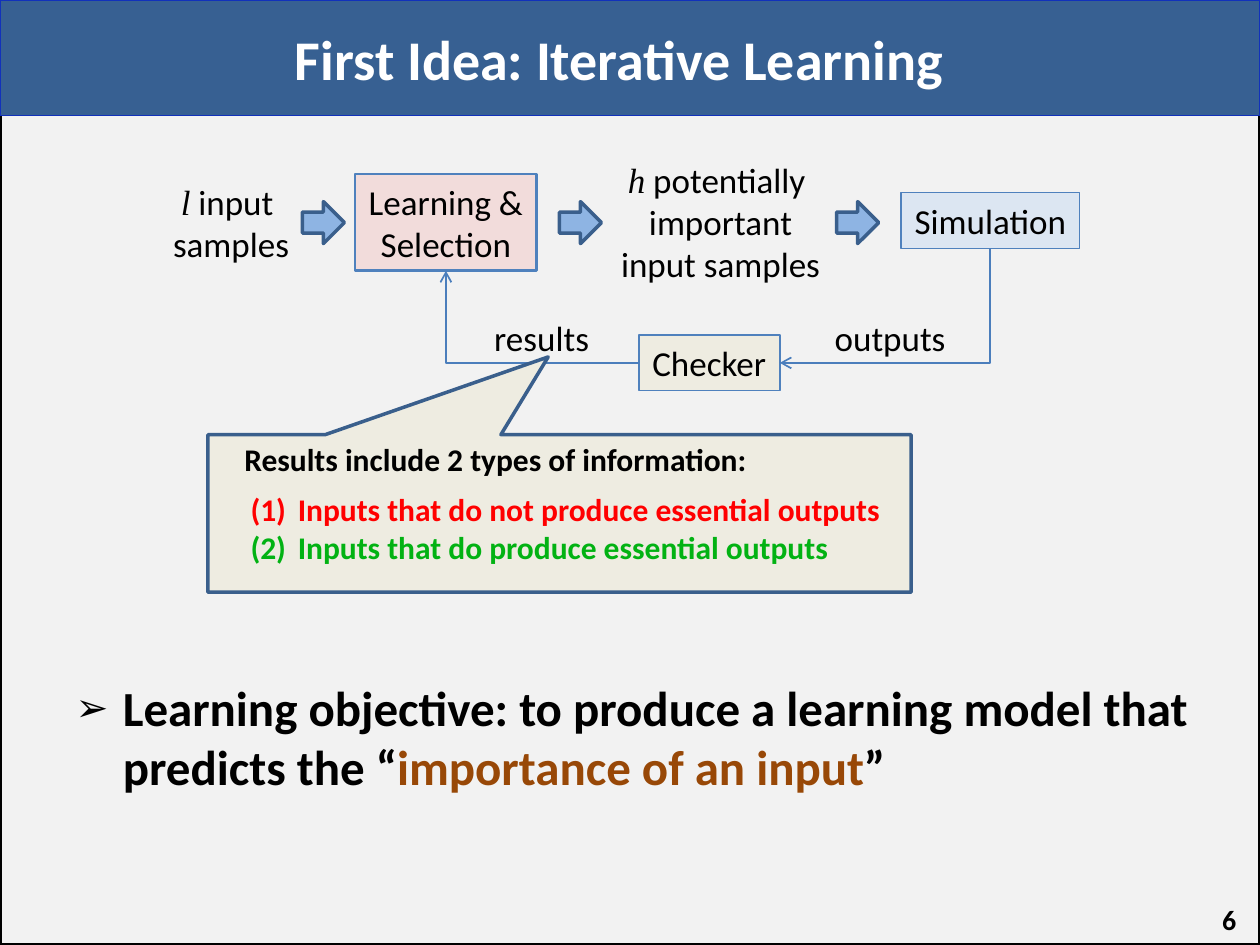
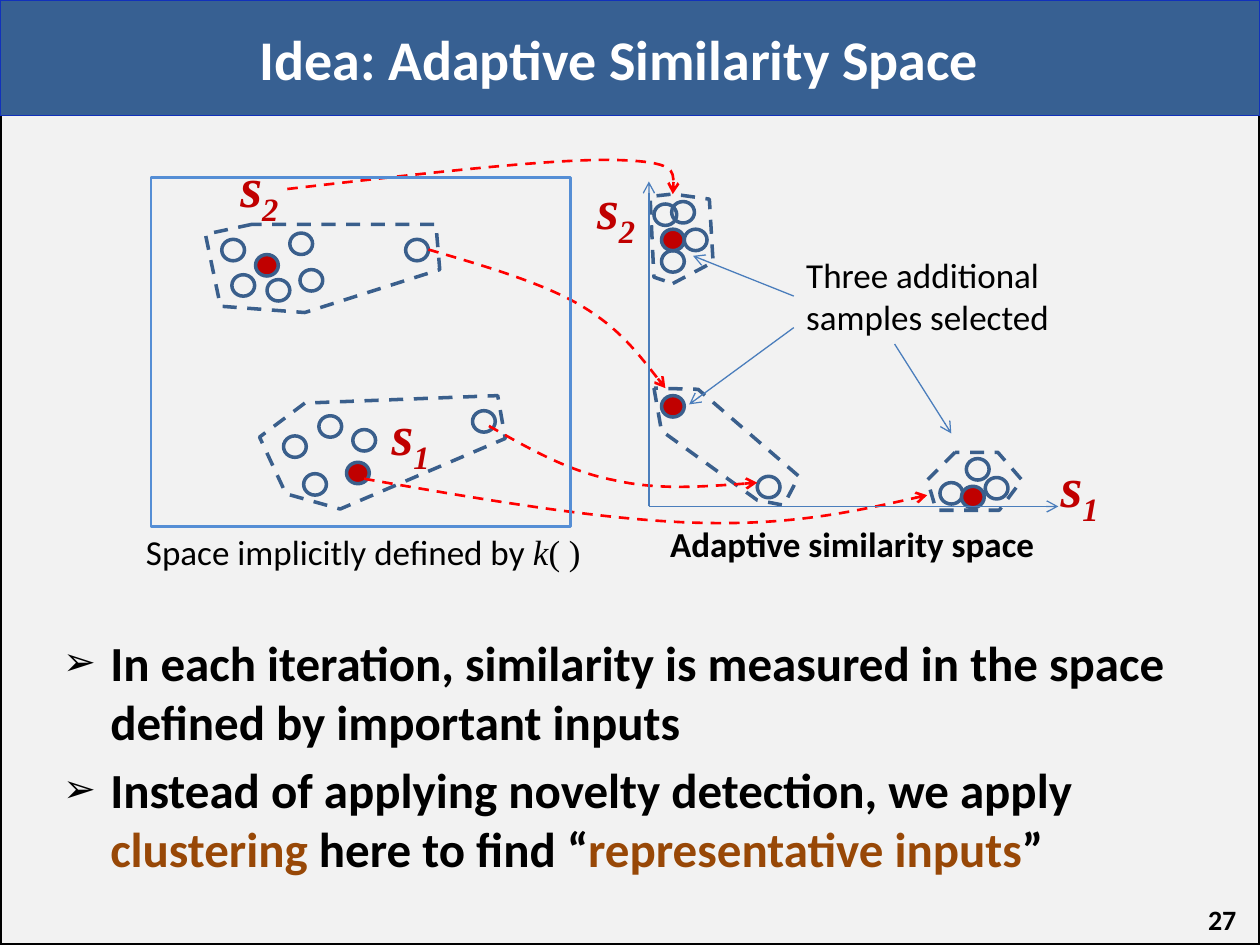
import pptx
import pptx.util
import pptx.dml.color
import pptx.enum.dml
import pptx.enum.shapes
import pptx.enum.text
import pptx.oxml.ns
from lxml import etree

Pt = pptx.util.Pt
qn = pptx.oxml.ns.qn
RGB = pptx.dml.color.RGBColor.from_string
SHAPE = pptx.enum.shapes.MSO_SHAPE
CONNECTOR = pptx.enum.shapes.MSO_CONNECTOR
ALIGN = pptx.enum.text.PP_ALIGN
AUTO_SIZE = pptx.enum.text.MSO_AUTO_SIZE

COLOURS = {
    "black": "000000", "white": "FFFFFF", "page": "F2F2F2",
    "band": "376092", "band edge": "1131BB",
    "emphasis": "984807", "negative": "FF0000", "positive": "02B213",
    "arrow": "8EB4E3", "dark edge": "3A5F8C", "box edge": "4F81BD",
    "flow": "4B7EBC", "learning": "F2DCDB", "simulation": "DCE6F2",
    "checker": "EEECE1", "selected": "C00000", "mapping": "FF0000",
    "space edge": "558ED5",
}
ARROW_BULLET = [("a:buSzPct", {"val": "80000"}), ("a:buChar", {"char": "➢"})]
NUMBER_BULLET = [("a:buAutoNum", {"type": "arabicParenBoth"})]
SERIF = "Times New Roman"


def write(frame, lines, size=20, bold=False, colour="black",
          align=ALIGN.LEFT, bullet=(), wrap=False):
    """Fill a text frame; each line is a list of (text, run settings)."""
    frame.word_wrap = wrap
    frame.auto_size = AUTO_SIZE.NONE if wrap else AUTO_SIZE.SHAPE_TO_FIT_TEXT
    for number, line in enumerate(lines):
        paragraph = frame.add_paragraph() if number else frame.paragraphs[0]
        paragraph.alignment = align
        if bullet:
            properties = paragraph._p.get_or_add_pPr()
            properties.set("marL", str(Pt(27)))
            properties.set("indent", str(-Pt(27)))
            for tag, settings in bullet:
                etree.SubElement(properties, qn(tag), settings)
        for text, settings in line:
            run = paragraph.add_run()
            run.text = text
            run.font.size = Pt(size)
            run.font.bold = bold
            run.font.name = settings.get("font", "Calibri")
            run.font.italic = settings.get("italic", False)
            run.font.color.rgb = RGB(COLOURS[settings.get("colour", colour)])
            if "baseline" in settings:
                run._r.get_or_add_rPr().set("baseline", settings["baseline"])


def paint(shape, edge, width, fill=None, dashed=False, arrow=False):
    """Set fill, line and arrowhead of a shape or connector, without shadow."""
    if fill:
        shape.fill.solid()
        shape.fill.fore_color.rgb = RGB(COLOURS[fill])
    elif hasattr(shape, "fill"):
        shape.fill.background()
    shape.line.color.rgb = RGB(COLOURS[edge])
    shape.line.width = Pt(width)
    if dashed:
        shape.line.dash_style = pptx.enum.dml.MSO_LINE.DASH
    if arrow:
        etree.SubElement(shape.line._get_or_add_ln(), qn("a:tailEnd"), {"type": "arrow"})
    etree.SubElement(shape._element.spPr, qn("a:effectLst"))


deck = pptx.Presentation()
deck.slide_width, deck.slide_height = Pt(720), Pt(540)

# Shared layout
layout = deck.slide_layouts[1]
for placeholder in list(layout.placeholders)[2:]:
    placeholder._element.getparent().remove(placeholder._element)
layout_title = layout.placeholders[0]
layout_title.left, layout_title.top = Pt(12), Pt(0)
layout_title.width, layout_title.height = Pt(684), Pt(66)

PAGES = [
    {"title": "First Idea: Iterative Learning", "number": "6",
     "place": (36, 383.8, 658.8, 84.2),
     "points": [[("Learning objective: to produce a learning model that predicts the “", {}),
                 ("importance of an input", {"colour": "emphasis"}), ("”", {})]]},
    {"title": "Idea: Adaptive Similarity Space", "number": "27",
     "place": (28.8, 357.8, 653, 157.7),
     "points": [[("In each iteration, similarity is measured in the space "
                  "defined by important inputs", {})],
                [("Instead of applying novelty detection, we apply ", {}),
                 ("clustering ", {"colour": "emphasis"}), ("here to find “", {}),
                 ("representative inputs", {"colour": "emphasis"}), ("”", {})]]},
]
slides = []
for page in PAGES:
    slide = deck.slides.add_slide(layout)
    slides.append(slide)
    write(slide.shapes.title.text_frame, [[(page["title"], {})]], 32, True, "white",
          ALIGN.CENTER, wrap=True)
    body = slide.placeholders[1]
    body.left, body.top, body.width, body.height = map(Pt, page["place"])
    write(body.text_frame, page["points"], 28, True, bullet=ARROW_BULLET, wrap=True)
    page_number = slide.shapes.add_textbox(Pt(545.8), Pt(511.2), Pt(167.8), Pt(28.8))
    page_number.text_frame.vertical_anchor = pptx.enum.text.MSO_ANCHOR.MIDDLE
    write(page_number.text_frame, [[(page["number"], {})]], 16, True,
          align=ALIGN.RIGHT, wrap=True)

learning_slide, space_slide = slides

# The page frame and title band are drawn once and moved to the layout
page_frame = learning_slide.shapes.add_shape(SHAPE.RECTANGLE, 0, 0, Pt(720), Pt(540))
title_band = learning_slide.shapes.add_shape(SHAPE.RECTANGLE, 0, 0, Pt(720), Pt(66))
paint(page_frame, "black", 2, "page")
paint(title_band, "band edge", 0.75, "band")
for depth, backdrop in enumerate((page_frame, title_band), start=2):
    layout.shapes._spTree.insert(depth, backdrop._element)

# Iterative learning loop
shapes = learning_slide.shapes
ITALIC = {"font": SERIF, "italic": True}
LOOP_LABELS = [
    (91.4, 99.4, 81.4, 55.4, [[("l", ITALIC), (" input ", {})], [("samples", {})]]),
    (347, 87.1, 129.6, 80, [[("h", ITALIC), (" potentially ", {})],
                            [("important", {})], [("input samples", {})]]),
    (469.4, 177.1, 78.5, 31.7, [[("outputs", {})]]),
    (275, 177.1, 69.1, 31.7, [[("results", {})]]),
]
for left, top, width, height, lines in LOOP_LABELS:
    label = shapes.add_textbox(Pt(left), Pt(top), Pt(width), Pt(height))
    write(label.text_frame, lines, align=ALIGN.CENTER)

for left in (172.8, 319.7, 478.1):
    step_arrow = shapes.add_shape(SHAPE.RIGHT_ARROW, Pt(left), Pt(115.2), Pt(24), Pt(24))
    paint(step_arrow, "dark edge", 2, "arrow")

steps = {}
for step, left, top, width, height, edge_width, lines in [
    ("learning", 203, 99.4, 103.7, 55.4, 1.5, ["Learning &", "Selection"]),
    ("simulation", 514.8, 110.2, 102.2, 31.7, 0.75, ["Simulation"]),
    ("checker", 365, 191.5, 80.6, 31.7, 1, ["Checker"]),
]:
    box = shapes.add_shape(SHAPE.RECTANGLE, Pt(left), Pt(top), Pt(width), Pt(height))
    paint(box, "box edge", edge_width, step)
    write(box.text_frame, [[(line, {})] for line in lines], align=ALIGN.CENTER)
    steps[step] = box

for source, source_side, target, target_side in [
    ("simulation", 2, "checker", 3), ("checker", 1, "learning", 2),
]:
    flow = shapes.add_connector(CONNECTOR.ELBOW, 0, 0, 0, 0)
    flow.begin_connect(steps[source], source_side)
    flow.end_connect(steps[target], target_side)
    flow._element.spPr.find(qn("a:prstGeom")).set("prst", "bentConnector2")
    paint(flow, "flow", 1, arrow=True)
    if source_side == 2:  # leaves downwards, so the elbow is turned a quarter
        across, down = flow.width, flow.height
        flow.left += (across - down) // 2
        flow.top += (down - across) // 2
        flow.width, flow.height = down, across
        flow._element.spPr.xfrm.flipH = False
        flow._element.spPr.xfrm.rot = 90

callout = shapes.add_shape(SHAPE.RECTANGULAR_CALLOUT, Pt(118.8), Pt(248.4), Pt(401.8), Pt(90))
callout.adjustments[0], callout.adjustments[1] = -0.016, -0.994
paint(callout, "dark edge", 2, "checker")
heading = shapes.add_textbox(Pt(132.5), Pt(247.7), Pt(303.8), Pt(28.8))
write(heading.text_frame, [[("Results include 2 types of information:", {})]], 18, True)
result_types = shapes.add_textbox(Pt(136.1), Pt(276.5), Pt(377.3), Pt(51.1))
write(result_types.text_frame, [
    [("Inputs that do not produce essential outputs", {"colour": "negative"})],
    [("Inputs that do produce essential outputs", {"colour": "positive"})],
], 18, True, bullet=NUMBER_BULLET)

# Adaptive similarity space
shapes = space_slide.shapes
CLUSTERS = [
    {"selected": (146, 145.5),
     "samples": [(146, 145.5), (132.5, 157), (126.7, 136.8), (152.6, 159.8),
                 (165.6, 133.2), (171.4, 154.1), (231.8, 136.8)],
     "outline": [(144, 128.2), (117.4, 133.9), (126, 175), (174.2, 178.6),
                 (251.3, 154.1), (249.1, 128.2)]},
    {"selected": (198, 264.2),
     "samples": [(198, 264.2), (162, 249.1), (182.2, 237.6), (173.5, 270.7),
                 (201.6, 245.5), (270, 234.7)],
     "outline": [(174.2, 230.4), (148.3, 249.8), (163.4, 282.2), (194.4, 290.9),
                 (288.7, 250.6), (284.4, 226.1)]},
    {"selected": (549.4, 277.9),
     "samples": [(537.1, 275.8), (563, 272.9), (549.4, 277.9), (552.2, 262.1)],
     "outline": [(545.8, 258.5), (529.9, 274.3), (535, 291.6), (571, 291.6),
                 (583.9, 274.3), (570.2, 258.5)]},
    {"selected": (378, 226.1),
     "samples": [(432.7, 272.2), (378, 226.1)],
     "outline": [(373.7, 221.8), (378, 246.2), (432.7, 285.8), (447.8, 288.7),
                 (456.5, 272.2), (398.9, 222.5)]},
    {"selected": (378, 131),
     "samples": [(378, 131), (383.8, 115.2), (378, 143.3), (391, 131), (373.7, 116.6)],
     "outline": [(384.5, 162), (407.5, 149.8), (405.4, 113.8), (384.5, 110.9),
                 (371.5, 112.3), (373.7, 158.4)]},
]
for cluster in CLUSTERS:
    for left, top in cluster["samples"]:
        sample = shapes.add_shape(SHAPE.OVAL, Pt(left), Pt(top), Pt(13), Pt(12.25))
        chosen = (left, top) == cluster["selected"]
        paint(sample, "dark edge", 2, "selected" if chosen else None)
    start, *corners = [(Pt(x), Pt(y)) for x, y in cluster["outline"]]
    builder = shapes.build_freeform(*start)
    builder.add_line_segments(corners, close=True)
    paint(builder.convert_to_shape(), "dark edge", 2, dashed=True)

# Each mapping is two Bézier pieces: a start, then three points per piece
MAPPINGS = [
    [(244.8, 142.6), (276.5, 151.9), (308.9, 161.3), (331.2, 174.2),
     (353.5, 187.2), (366.5, 204.5), (380.2, 221.8)],
    [(279.4, 243.4), (302.4, 256.3), (324.7, 269.3), (350.6, 274.3),
     (375.8, 280.1), (404.6, 277.9), (432.7, 275.8)],
    [(164.2, 108), (239, 99.4), (313.9, 90.7), (350.6, 91.4),
     (386.6, 92.2), (385.9, 101.5), (384.5, 110.9)],
    [(208.1, 273.6), (277.2, 285.8), (345.6, 297.4), (399.6, 298.8),
     (452.9, 300.2), (491.8, 291.6), (529.9, 283)],
]
for points in MAPPINGS:
    start, *controls = [(Pt(x), Pt(y)) for x, y in points]
    builder = shapes.build_freeform(*start)
    builder.add_line_segments(controls, close=False)
    mapping = builder.convert_to_shape()
    track = next(mapping._element.iter(qn("a:path")))
    segments = track.findall(qn("a:lnTo"))
    for first in (0, 3):
        curve = etree.SubElement(track, qn("a:cubicBezTo"))
        for segment in segments[first:first + 3]:
            curve.append(segment[0])
            track.remove(segment)
    paint(mapping, "mapping", 1.5, dashed=True, arrow=True)

implicit_space = shapes.add_shape(SHAPE.RECTANGLE, Pt(86.4), Pt(101.5), Pt(239.8), Pt(199.4))
paint(implicit_space, "space edge", 1.5)

AXES = [(370.8, 289.4, 370.8, 103.7), (370.8, 289.4, 604.8, 289.4)]
POINTERS = [(453.6, 169.2, 396, 146.2), (453.6, 187.2, 393.8, 231.1),
            (511.2, 196.6, 543.6, 247.7)]
for ends in AXES + POINTERS:
    line = shapes.add_connector(CONNECTOR.STRAIGHT, *map(Pt, ends))
    paint(line, "flow", 0.75, arrow=True)

for left, top, index in [(599, 254.2, "1"), (334.1, 95.8, "2"),
                         (216.7, 224.6, "1"), (130.3, 82.8, "2")]:
    symbol = shapes.add_textbox(Pt(left), Pt(top), Pt(48.2), Pt(46.1))
    write(symbol.text_frame, [[("s", ITALIC), (index, {**ITALIC, "baseline": "-25000"})]],
          32, True, "selected", wrap=True)

for left, top, width, height, bold, lines in [
    (76.3, 299.5, 265, 31.7, False,
     [[("Space implicitly defined by ", {}), ("k", ITALIC), ("( )", {"font": SERIF})]]),
    (375.8, 295.2, 224.6, 31.7, True, [[("Adaptive similarity space", {})]]),
    (453.6, 141.1, 154.8, 55.4, False,
     [[("Three additional", {})], [("samples selected", {})]]),
]:
    caption = shapes.add_textbox(Pt(left), Pt(top), Pt(width), Pt(height))
    write(caption.text_frame, lines, bold=bold)

deck.save("out.pptx")
